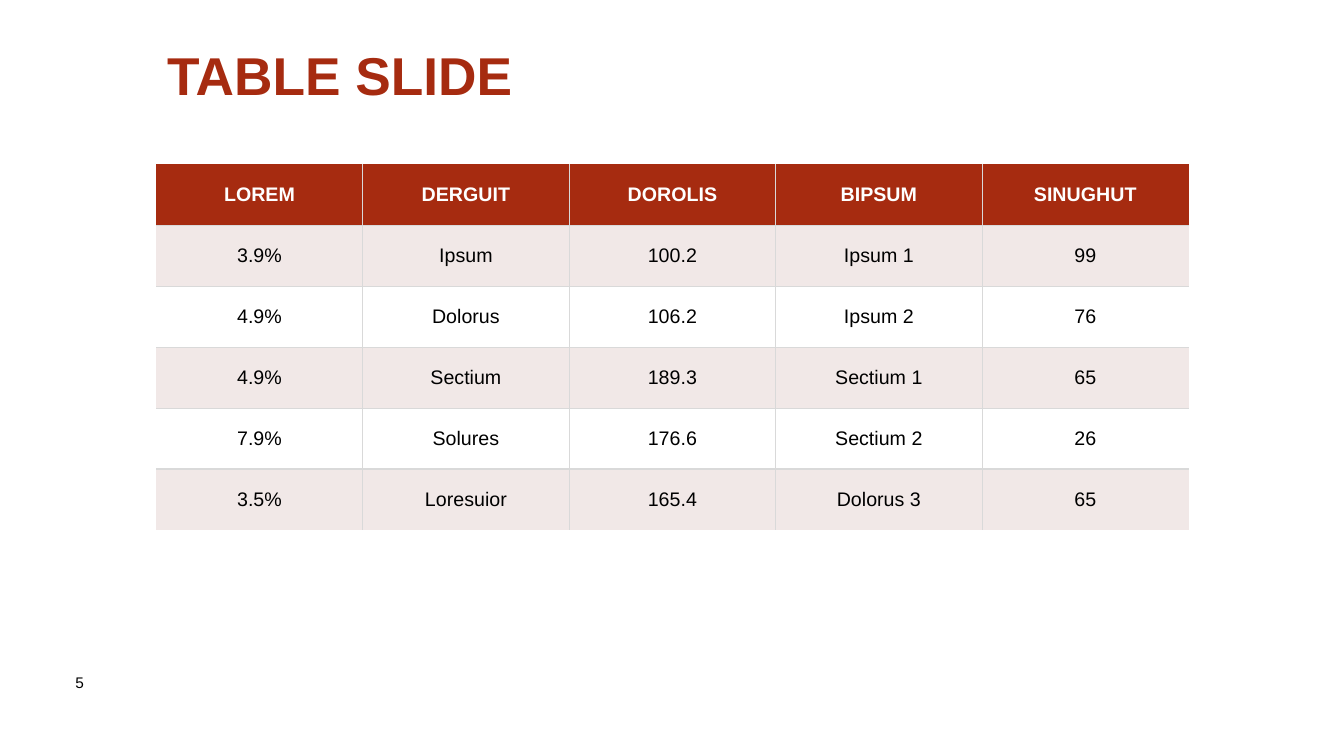
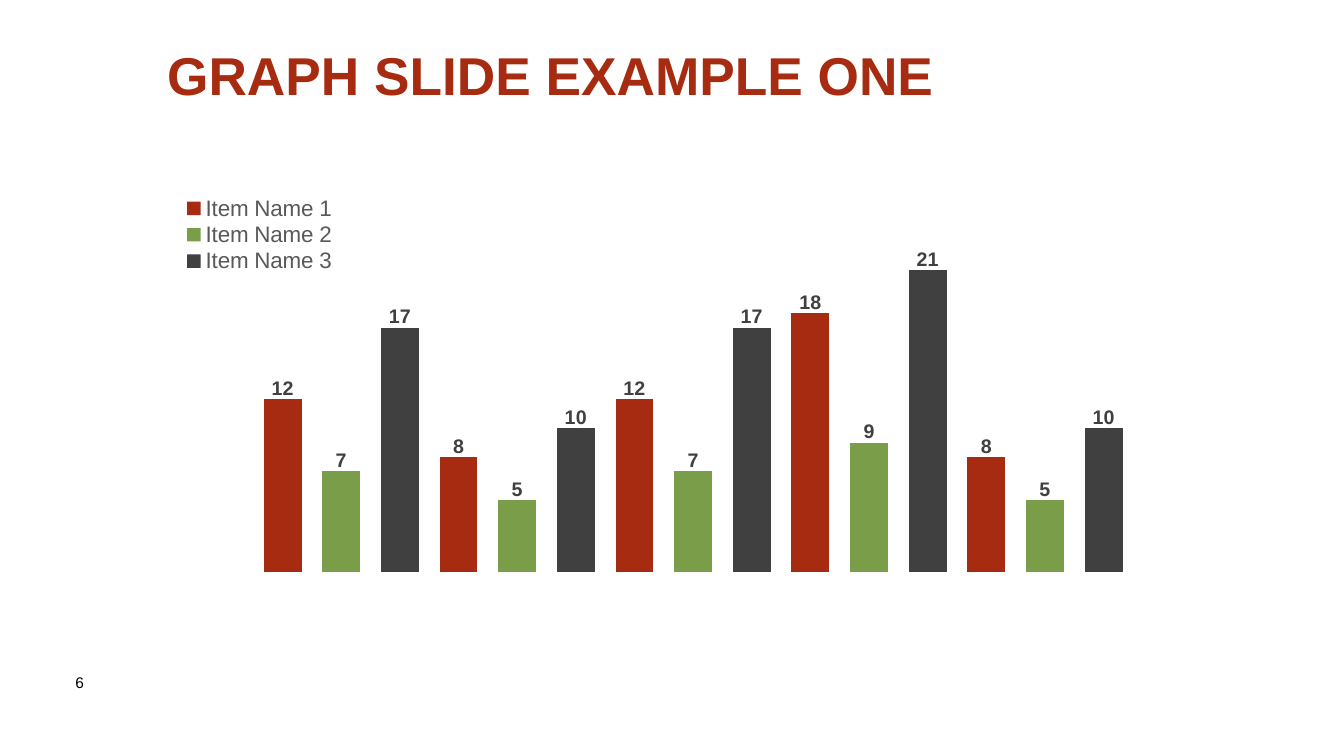
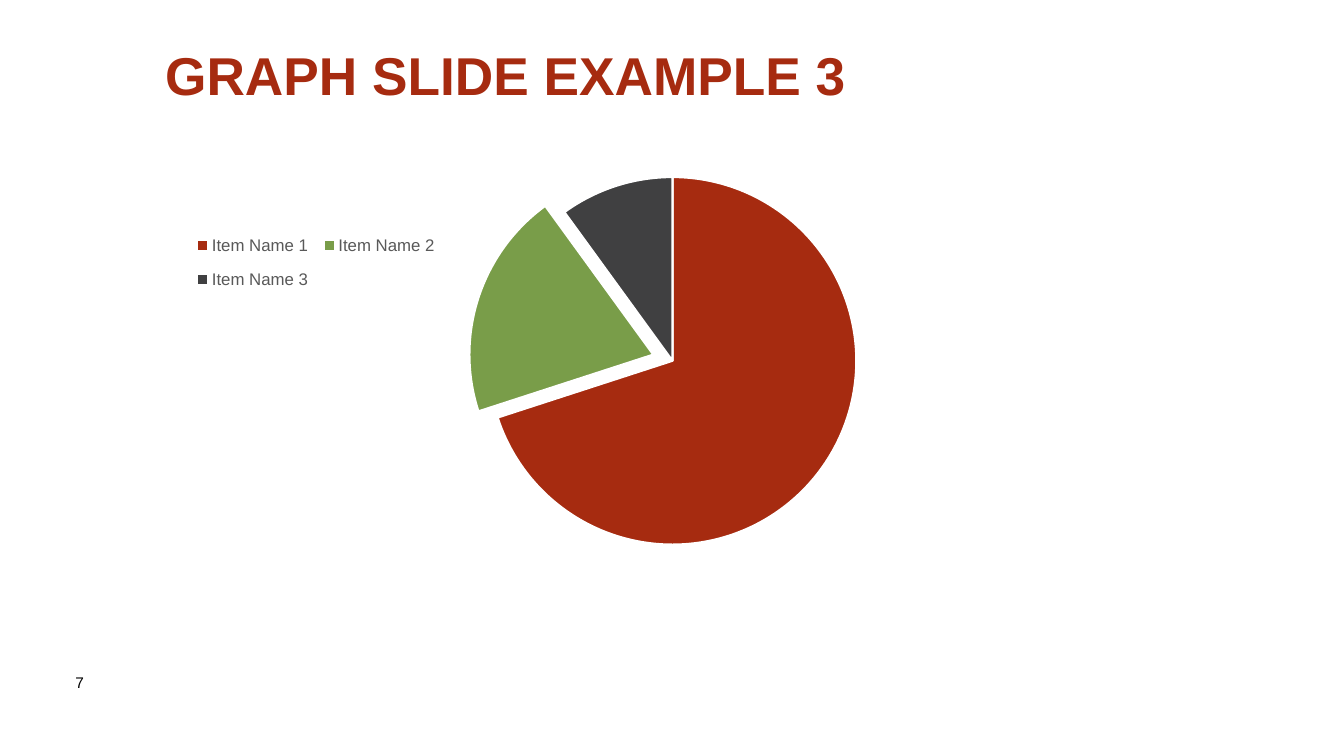
from dataclasses import dataclass

import pptx
import pptx.chart.data
import pptx.dml.color
import pptx.enum.chart
import pptx.enum.text
import pptx.oxml
import pptx.oxml.ns
import pptx.util
from pptx.util import Inches

qn = pptx.oxml.ns.qn


@dataclass(frozen=True)
class Theme:
    font: str = "Arial"
    red: str = "A62B10"
    green: str = "799D49"
    dark: str = "404041"
    black: str = "000000"
    white: str = "FFFFFF"
    band: str = "F1E8E7"
    rule: str = "D9D9D9"
    legend: str = "595959"
    label: str = "404040"
    title_size: int = 38
    body_size: int = 14
    page_size: int = 11
    column_legend_size: int = 16
    pie_legend_size: int = 12


THEME = Theme()
ITEM_COLORS = {
    "Item Name 1": THEME.red,
    "Item Name 2": THEME.green,
    "Item Name 3": THEME.dark,
}
CONTENT_LEFT, CONTENT_TOP, CONTENT_WIDTH = 1.55, 1.63, 10.24
TABLE_HEIGHT, CHART_HEIGHT = 3.63, 4.24

TABLE_ROWS = [
    ["LOREM", "DERGUIT", "DOROLIS", "BIPSUM", "SINUGHUT"],
    ["3.9%", "Ipsum", "100.2", "Ipsum 1", "99"],
    ["4.9%", "Dolorus", "106.2", "Ipsum 2", "76"],
    ["4.9%", "Sectium", "189.3", "Sectium 1", "65"],
    ["7.9%", "Solures", "176.6", "Sectium 2", "26"],
    ["3.5%", "Loresuior", "165.4", "Dolorus 3", "65"],
]
COLUMN_GROUPS = [(12, 7, 17), (8, 5, 10), (12, 7, 17), (18, 9, 21), (8, 5, 10)]
PIE_VALUES = (70, 20, 10)


def rgb(color):
    return pptx.dml.color.RGBColor.from_string(color)


def fill(target, color):
    target.fill.solid()
    target.fill.fore_color.rgb = rgb(color)


def style_font(font, size, color, bold=False):
    font.name = THEME.font
    font.size = pptx.util.Pt(size)
    font.bold = bold
    font.color.rgb = rgb(color)


def put_text(tf, text, size=THEME.body_size, color=THEME.black, bold=False, align=None):
    tf.word_wrap = True
    p = tf.paragraphs[0]
    p.alignment = align
    r = p.add_run()
    r.text = text
    style_font(r.font, size, color, bold)


def add_text(s, text, left, top, width, height, margin_top=0.05, **style):
    sp = s.shapes.add_textbox(Inches(left), Inches(top), Inches(width), Inches(height))
    sp.text_frame.margin_top = Inches(margin_top)
    put_text(sp.text_frame, text, **style)


def add_slide(prs, page, title, left, width, height):
    s = prs.slides.add_slide(prs.slide_layouts[6])
    add_text(s, str(page), 0.65, 6.63, 0.58, 0.54, size=THEME.page_size)
    add_text(s, title, left, 0.32, width, height, margin_top=0.1,
             size=THEME.title_size, color=THEME.red, bold=True)
    return s


def set_borders(cell, inner_sides):
    """Rule the sides shared with another cell and clear the outer ones."""
    tcPr = cell._tc.get_or_add_tcPr()
    for i, side in enumerate("LRTB"):
        paint = (f'<a:solidFill><a:srgbClr val="{THEME.rule}"/></a:solidFill>'
                 if inner_sides[side] else "<a:noFill/>")
        tcPr.insert(i, pptx.oxml.parse_xml(
            f'<a:ln{side} {pptx.oxml.ns.nsdecls("a")} w="12700">{paint}</a:ln{side}>'))


def add_table(s, rows):
    n_rows, n_cols = len(rows), len(rows[0])
    table = s.shapes.add_table(n_rows, n_cols, Inches(CONTENT_LEFT), Inches(CONTENT_TOP),
                               Inches(CONTENT_WIDTH), Inches(TABLE_HEIGHT)).table
    table.horz_banding = False
    for i, row in enumerate(rows):
        header = i == 0
        background = THEME.red if header else THEME.band if i % 2 else THEME.white
        for j, text in enumerate(row):
            cell = table.cell(i, j)
            fill(cell, background)
            cell.vertical_anchor = pptx.enum.text.MSO_ANCHOR.MIDDLE
            cell.margin_top = cell.margin_bottom = Inches(0.04)
            put_text(cell.text_frame, text, color=THEME.white if header else THEME.black,
                     bold=header, align=pptx.enum.text.PP_ALIGN.CENTER)
            set_borders(cell, {"L": j > 0, "R": j < n_cols - 1,
                               "T": i > 0, "B": i < n_rows - 1})


def set_layout(parent, index, inner=False, **fractions):
    """Place a chart part by x, y, w and h as fractions of the chart."""
    for old in parent.findall(qn("c:layout")):
        parent.remove(old)
    parts = '<c:layoutTarget val="inner"/>' if inner else ""
    if "w" in fractions:
        parts += '<c:xMode val="edge"/><c:yMode val="edge"/>'
    parts += "".join(f'<c:{key} val="{value}"/>' for key, value in fractions.items())
    parent.insert(index, pptx.oxml.parse_xml(
        f'<c:layout {pptx.oxml.ns.nsdecls("c")}><c:manualLayout>{parts}'
        "</c:manualLayout></c:layout>"))


def add_chart(s, kind, data, plot_box, legend_box, legend_size, legend_position):
    chart = s.shapes.add_chart(kind, Inches(CONTENT_LEFT), Inches(CONTENT_TOP),
                               Inches(CONTENT_WIDTH), Inches(CHART_HEIGHT), data).chart
    chart.has_title = False
    style_font(chart.font, 10, THEME.black)
    chart.has_legend = True
    chart.legend.position = legend_position
    chart.legend.include_in_layout = False
    style_font(chart.legend.font, legend_size, THEME.legend)
    set_layout(chart.legend._element, 1, **legend_box)
    set_layout(chart._chartSpace.chart.plotArea, 0, inner=True, **plot_box)
    return chart


def add_column_chart(s, groups):
    """Stack the items with one bar per category, so that bars stand apart."""
    size = len(ITEM_COLORS)
    values = [value for group in groups for value in group]
    data = pptx.chart.data.CategoryChartData()
    data.categories = [str(i + 1) for i in range(len(values))]
    for k, name in reversed(list(enumerate(ITEM_COLORS))):
        data.add_series(name, [v if i % size == k else None for i, v in enumerate(values)])
    chart = add_chart(s, pptx.enum.chart.XL_CHART_TYPE.COLUMN_STACKED, data,
                      dict(x=0.094, y=0.113, w=0.852, h=0.841),
                      dict(x=0.02, y=0.07, w=0.16, h=0.19),
                      THEME.column_legend_size, pptx.enum.chart.XL_LEGEND_POSITION.RIGHT)
    axis = chart.value_axis
    axis.minimum_scale, axis.maximum_scale = 0, 25
    axis.has_major_gridlines = False
    axis.visible = chart.category_axis.visible = False
    plot = chart.plots[0]
    plot.gap_width, plot.overlap, plot.vary_by_categories = 55, 100, False
    for series in plot.series:
        fill(series.format, ITEM_COLORS[series.name])
        for i, value in enumerate(series.values):
            if value is not None:
                label_above_bar(series.points[i].data_label)


def label_above_bar(label):
    label.position = pptx.enum.chart.XL_LABEL_POSITION.INSIDE_END
    style_font(label.font, THEME.body_size, THEME.label, bold=True)
    set_layout(label._get_or_add_dLbl(), 1, x=0, y=-0.06)


def add_pie_chart(s, values, pulled_slice, explosion):
    data = pptx.chart.data.CategoryChartData()
    data.categories = list(ITEM_COLORS)
    data.add_series("Series 1", values)
    chart = add_chart(s, pptx.enum.chart.XL_CHART_TYPE.PIE, data,
                      dict(x=0.32, y=0.03, w=0.36, h=0.86),
                      dict(x=0.03, y=0.13, w=0.25, h=0.2),
                      THEME.pie_legend_size, pptx.enum.chart.XL_LEGEND_POSITION.BOTTOM)
    chart.plots[0].vary_by_categories = True
    series = chart.plots[0].series[0]
    for i, color in enumerate(ITEM_COLORS.values()):
        point = series.points[i]
        fill(point.format, color)
        point.format.line.color.rgb = rgb(THEME.white)
        point.format.line.width = pptx.util.Pt(1.5)
    dPt = series._element.findall(qn("c:dPt"))[pulled_slice]
    dPt.find(qn("c:spPr")).addprevious(pptx.oxml.parse_xml(
        f'<c:explosion {pptx.oxml.ns.nsdecls("c")} val="{explosion}"/>'))


def main():
    prs = pptx.Presentation()
    prs.slide_width, prs.slide_height = Inches(13.33), Inches(7.5)
    add_table(add_slide(prs, 5, "TABLE SLIDE", 1.56, 10.54, 0.94), TABLE_ROWS)
    add_column_chart(add_slide(prs, 6, "GRAPH SLIDE EXAMPLE ONE", 1.56, 10.58, 0.84),
                     COLUMN_GROUPS)
    add_pie_chart(add_slide(prs, 7, "GRAPH SLIDE EXAMPLE 3", 1.54, 10.24, 0.67),
                  PIE_VALUES, pulled_slice=1, explosion=11)
    prs.save("out.pptx")


if __name__ == "__main__":
    main()
